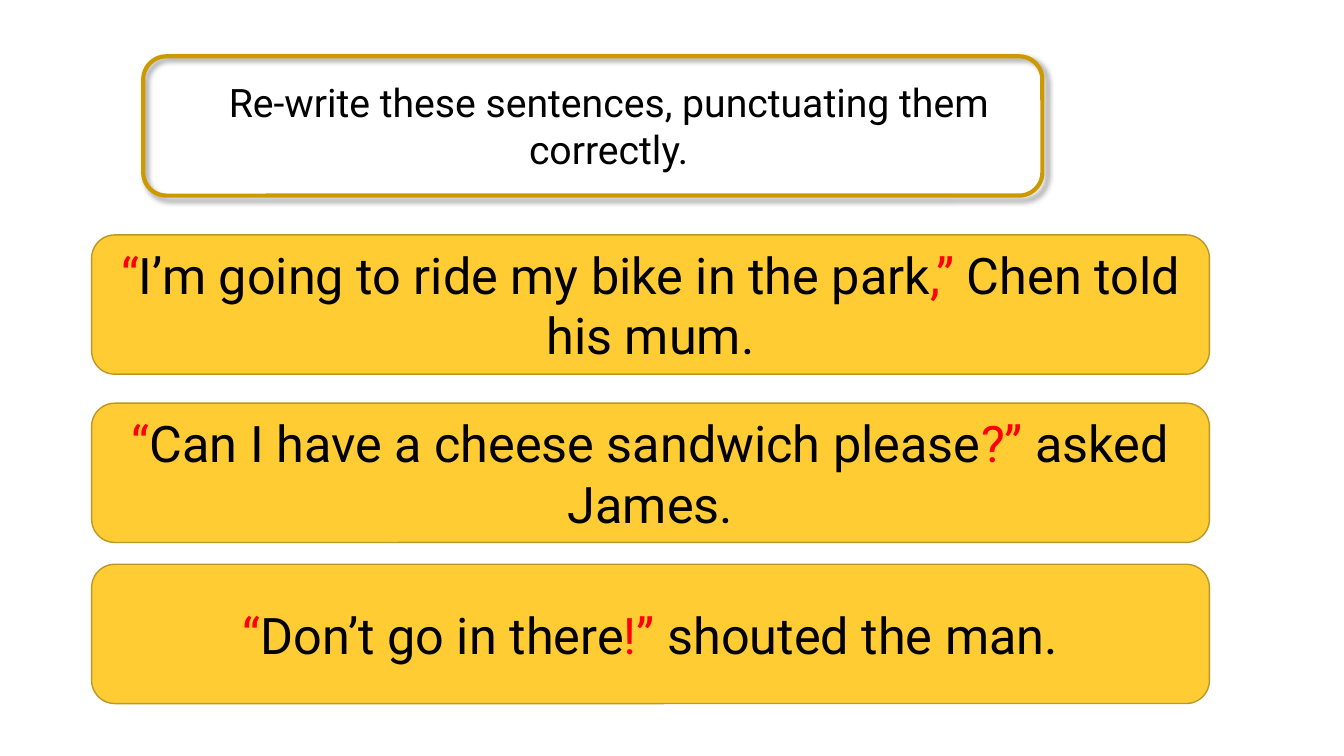
import lxml.etree
import pptx
import pptx.dml.color
import pptx.enum.shapes
import pptx.enum.text
import pptx.oxml
import pptx.oxml.ns
import pptx.util

Cm = pptx.util.Cm
Pt = pptx.util.Pt
RGBColor = pptx.dml.color.RGBColor

BLACK = RGBColor(0x00, 0x00, 0x00)
RED = RGBColor(0xFF, 0x00, 0x00)
GOLD = RGBColor(0xFF, 0xCC, 0x33)
GOLD_EDGE = RGBColor(0xBD, 0x97, 0x26)
FRAME_EDGE = RGBColor(0xCC, 0x99, 0x00)
FONT = "Roboto"

INSTRUCTION = "Re-write these sentences, punctuating them correctly."
SENTENCES = [
    (5.92, "I’m going to ride my bike in the park", ",”", " Chen told his mum."),
    (10.16, "Can I have a cheese sandwich please", "?”", " asked James."),
    (14.22, "Don’t go in there", "!”", " shouted the man."),
]
SHADOW = (
    f'<a:outerShdw {pptx.oxml.ns.nsdecls("a")} blurRad="50800" dist="38100" '
    'dir="2700000" algn="tl" rotWithShape="0"><a:srgbClr val="000000">'
    '<a:alpha val="40000"/></a:srgbClr></a:outerShdw>'
)


def add_rounded_box(slide, left, top, width, height, edge, edge_width):
    """Add an unfilled rounded rectangle without a shadow."""
    kind = pptx.enum.shapes.MSO_SHAPE.ROUNDED_RECTANGLE
    shape = slide.shapes.add_shape(kind, left, top, width, height)
    shape.shadow.inherit = False
    shape.fill.background()
    shape.line.color.rgb = edge
    shape.line.width = edge_width
    return shape


def format_paragraph(paragraph, size):
    """Centre a paragraph and set its font and size."""
    paragraph.alignment = pptx.enum.text.PP_ALIGN.CENTER
    paragraph.font.name = FONT
    paragraph.font.size = size


def add_instruction(slide, left, top, width, height):
    """Place the shadowed frame and the title inside it."""
    frame = add_rounded_box(slide, left, top, width, height, FRAME_EDGE, Pt(3))
    effects = frame._element.spPr.find(pptx.oxml.ns.qn("a:effectLst"))
    effects.append(lxml.etree.fromstring(SHADOW))
    title = slide.shapes.title
    title.left, title.top = left + Cm(0.69), top + Cm(0.43)
    title.width, title.height = width - Cm(0.58), height - Cm(0.86)
    text_frame = title.text_frame
    text_frame.text = INSTRUCTION
    text_frame.word_wrap = True
    text_frame.auto_size = pptx.enum.text.MSO_AUTO_SIZE.SHAPE_TO_FIT_TEXT
    text_frame.vertical_anchor = pptx.enum.text.MSO_ANCHOR.TOP
    paragraph = text_frame.paragraphs[0]
    format_paragraph(paragraph, Pt(28))
    paragraph.font.color.rgb = BLACK


def add_sentence(slide, left, top, width, height, speech, closing, speaker):
    """Place one sentence box with its speech punctuation in red."""
    box = add_rounded_box(slide, left, top, width, height, GOLD_EDGE, Pt(1))
    box.fill.solid()
    box.fill.fore_color.rgb = GOLD
    box.text_frame.word_wrap = True
    box.text_frame.vertical_anchor = pptx.enum.text.MSO_ANCHOR.MIDDLE
    paragraph = box.text_frame.paragraphs[0]
    format_paragraph(paragraph, Pt(36))
    for text, color in (("“", RED), (speech, BLACK), (closing, RED), (speaker, BLACK)):
        run = paragraph.add_run()
        run.text = text
        run.font.color.rgb = color


def main():
    """Build and save the slide."""
    presentation = pptx.Presentation()
    presentation.slide_width = Cm(33.87)
    presentation.slide_height = Cm(19.05)
    slide = presentation.slides.add_slide(presentation.slide_layouts[5])
    add_instruction(slide, Cm(3.61), Cm(1.42), Cm(22.66), Cm(3.51))
    for top, speech, closing, speaker in SENTENCES:
        add_sentence(slide, Cm(2.31), Cm(top), Cm(28.17), Cm(3.51), speech, closing, speaker)
    presentation.save("out.pptx")


if __name__ == "__main__":
    main()
